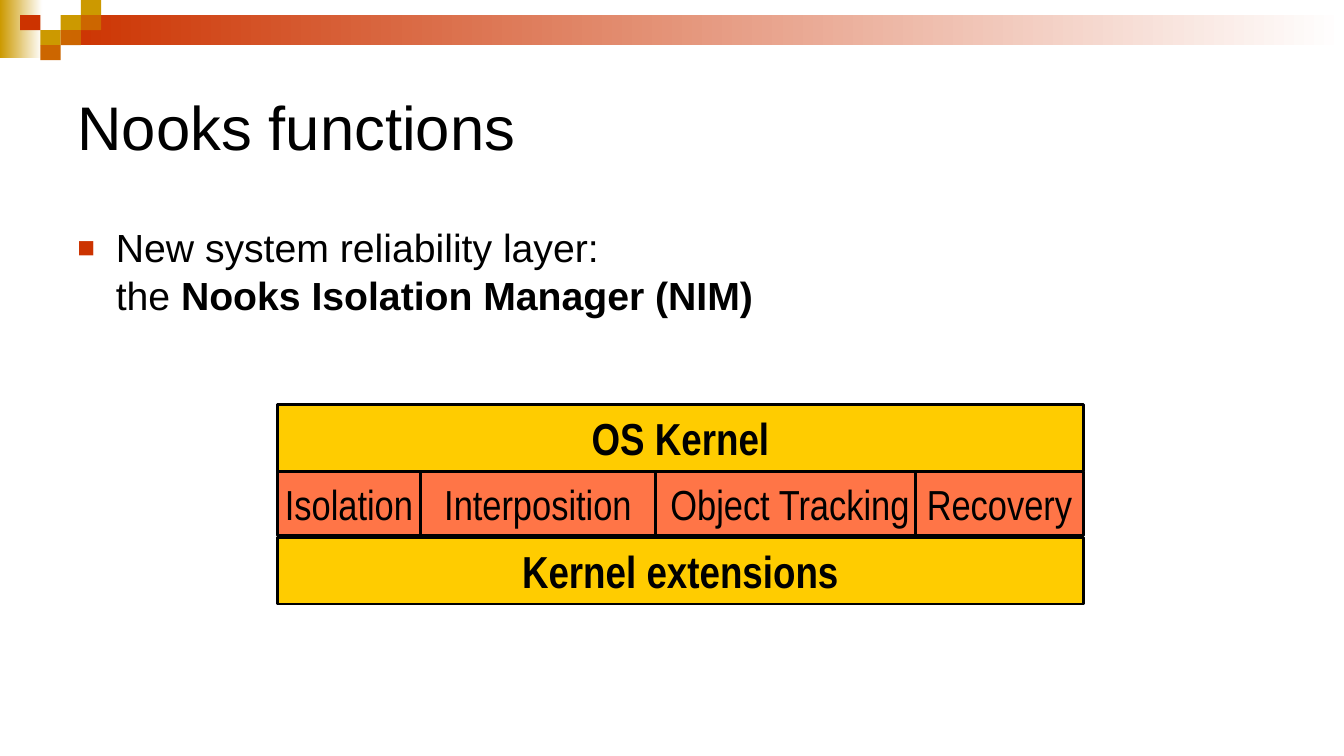
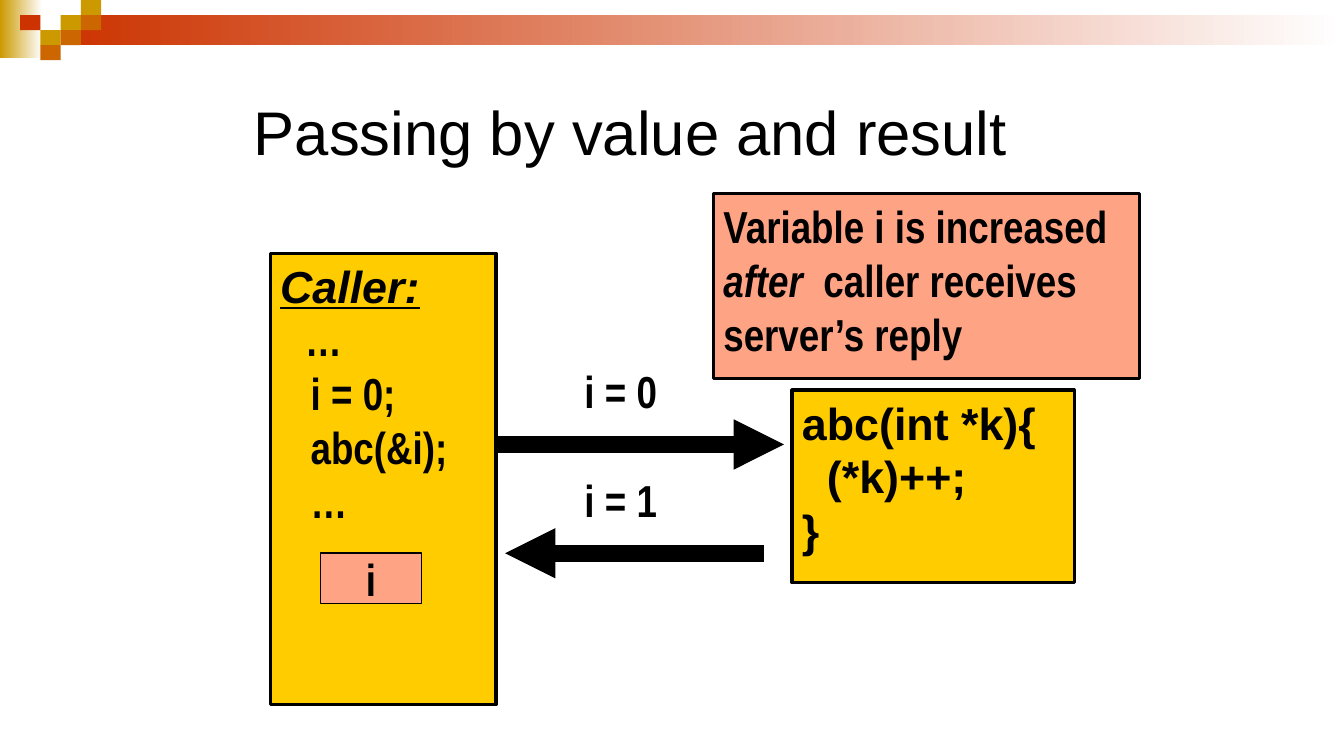
"""Two slides on the Nooks isolation layer and passing by value and result."""
from lxml import etree
from pptx import Presentation
from pptx.dml.color import RGBColor
from pptx.enum import shapes, text
from pptx.oxml.ns import qn
from pptx.util import Cm, Pt

COLORS = {
    "black": "000000", "white": "FFFFFF", "gold": "CC9900", "orange": "CC6600",
    "red": "CC3300", "yellow": "FFCC00", "coral": "FF7547", "salmon": "FFA385",
}
SANS, NARROW = "Arial", "Arial Narrow"
SLIDE_W, SLIDE_H = 33.87, 19.05

TILE_W, TILE_H = 0.51, 0.38
TILES = [
    (3, 1, "gold"), (4, 0, "gold"), (4, 1, "orange"), (2, 2, "gold"),
    (1, 1, "red"), (3, 2, "orange"), (2, 3, "orange"),
]
BANDS = [
    ((0, 0, 1.07, 1.47), "gold"),
    ((3 * TILE_W, TILE_H, SLIDE_W - 3 * TILE_W, 2 * TILE_H), "red"),
]

NIM_TEXT = [[("New system reliability layer:", {}), ("\n", {}), ("the ", {}),
             ("Nooks Isolation Manager (NIM)", {"bold": True})]]
STACK_LEFT, STACK_W = 6.99, 20.32
KERNEL_LAYERS = [("OS Kernel", 10.19), ("Kernel extensions", 13.54)]
NIM_FUNCTIONS = [("Isolation", 3.61), ("Interposition", 5.92),
                 ("Object Tracking", 6.78), ("Recovery", 4.24)]

CALLER = [
    [("Caller:", {"font": SANS, "italic": True, "underline": True})],
    "…", "i = 0;", "abc(&i);", "…",
]
CALLER_INDENTS = [0, 0.63, 0.77, 0.77, 0.77]
SERVER = ["abc(int *k){", "(*k)++;", "}"]
SERVER_INDENTS = [0, 0.63, 0]
REMARK = [
    "Variable i is increased",
    [("after ", {"italic": True}), (" caller receives", {})],
    "server’s reply",
]
MESSAGES = [("i = 1", 11.79, 13.94, 19.25, 12.73),
            ("i = 0", 9.04, 11.2, 11.13, 19.76)]


def rgb(color):
    return RGBColor.from_string(COLORS[color])


def write(shape, paragraphs, size=32, font=NARROW, bold=False, align="LEFT",
          anchor="TOP", wrap=True, inset=0.25, indents=()):
    frame = shape.text_frame
    frame.word_wrap = wrap
    frame.vertical_anchor = getattr(text.MSO_ANCHOR, anchor)
    frame.margin_left = frame.margin_right = Cm(inset)
    frame.margin_top = frame.margin_bottom = Cm(0.13)
    for number, content in enumerate(paragraphs):
        paragraph = frame.add_paragraph() if number else frame.paragraphs[0]
        paragraph.alignment = getattr(text.PP_ALIGN, align)
        if indents:
            paragraph._p.get_or_add_pPr().set("marL", str(Cm(indents[number])))
        runs = [(content, {})] if isinstance(content, str) else content
        for words, style in runs:
            if words == "\n":
                paragraph.add_line_break()
                continue
            run = paragraph.add_run()
            run.text = words
            run.font.size = Pt(size)
            run.font.name = style.get("font", font)
            run.font.bold = style.get("bold", bold)
            run.font.italic = style.get("italic", False)
            run.font.underline = style.get("underline", False)
            run.font.color.rgb = rgb("black")
    return shape


def add_text(slide, box, paragraphs, **style):
    return write(slide.shapes.add_textbox(*map(Cm, box)), paragraphs, **style)


def add_box(slide, box, fill, border=None):
    shape = slide.shapes.add_shape(shapes.MSO_SHAPE.RECTANGLE, *map(Cm, box))
    shape.shadow.inherit = False
    shape.fill.solid()
    shape.fill.fore_color.rgb = rgb(fill)
    if border:
        shape.line.color.rgb = rgb("black")
        shape.line.width = Pt(border)
    else:
        shape.line.fill.background()
    return shape


def add_arrow(slide, start, end, y):
    arrow = slide.shapes.add_connector(
        shapes.MSO_CONNECTOR.STRAIGHT, Cm(start), Cm(y), Cm(end), Cm(y))
    arrow.line.color.rgb = rgb("black")
    arrow.line.width = Pt(12)
    etree.SubElement(arrow.line._get_or_add_ln(), qn("a:tailEnd"), type="triangle")
    etree.SubElement(arrow._element.spPr, qn("a:effectLst"))


def add_bullet(paragraph, indent):
    props = paragraph._p.get_or_add_pPr()
    props.set("marL", str(Cm(indent)))
    props.set("indent", str(-Cm(indent)))
    color = etree.SubElement(props, qn("a:buClr"))
    etree.SubElement(color, qn("a:srgbClr"), val=COLORS["red"])
    etree.SubElement(props, qn("a:buSzPct"), val="75000")
    etree.SubElement(props, qn("a:buFont"), typeface=SANS)
    etree.SubElement(props, qn("a:buChar"), char="■")


def new_slide(deck, title, title_box):
    slide = deck.slides.add_slide(deck.slide_layouts[6])
    for box, color in BANDS:
        fill = add_box(slide, box, color).fill
        fill.gradient()
        fill.gradient_angle = 0
        for stop, shade in zip(fill.gradient_stops, (color, "white")):
            stop.color.rgb = rgb(shade)
    for column, row, color in TILES:
        add_box(slide, (column * TILE_W, row * TILE_H, TILE_W, TILE_H), color)
    add_text(slide, title_box, [title], size=44, font=SANS, anchor="MIDDLE")
    return slide


def build_functions(deck):
    slide = new_slide(deck, "Nooks functions", (1.7, 1.27, 30.48, 3.81))
    body = add_text(slide, (1.7, 5.51, 30.48, 10.8), NIM_TEXT, size=28, font=SANS)
    add_bullet(body.text_frame.paragraphs[0], 0.97)
    for label, top in KERNEL_LAYERS:
        layer = add_box(slide, (STACK_LEFT, top, STACK_W, 1.68), "yellow", 2)
        write(layer, [label], bold=True, align="CENTER", anchor="MIDDLE")
    left = STACK_LEFT
    for label, width in NIM_FUNCTIONS:
        left = min(left, STACK_LEFT + STACK_W - width)
        function = add_box(slide, (left, 11.89, width, 1.6), "coral", 2)
        write(function, [label], size=30, align="CENTER", anchor="MIDDLE",
              wrap=False, inset=0.13)
        left += width


def build_passing(deck):
    slide = new_slide(deck, "Passing by value and result", (6.15, 1.7, 23.5, 3.18))
    for label, label_top, arrow_y, start, end in MESSAGES:
        add_arrow(slide, start, end, arrow_y)
        add_text(slide, (14.48, label_top, 2.34, 1.6), [label], bold=True, wrap=False)
    caller = add_box(slide, (6.81, 6.38, 5.69, 11.38), "yellow", 2.25)
    write(caller, CALLER, bold=True, indents=CALLER_INDENTS)
    variable = add_box(slide, (8.08, 13.94, 2.54, 1.27), "salmon", 1)
    write(variable, ["i"], bold=True, align="CENTER", anchor="MIDDLE", wrap=False)
    server = add_box(slide, (19.96, 9.83, 7.11, 4.85), "yellow", 2.25)
    write(server, SERVER, font=SANS, bold=True, indents=SERVER_INDENTS)
    remark = add_box(slide, (17.98, 4.88, 10.74, 4.65), "salmon", 2.25)
    write(remark, REMARK, bold=True)


def main():
    deck = Presentation()
    deck.slide_width, deck.slide_height = Cm(SLIDE_W), Cm(SLIDE_H)
    build_functions(deck)
    build_passing(deck)
    deck.save("out.pptx")


if __name__ == "__main__":
    main()
